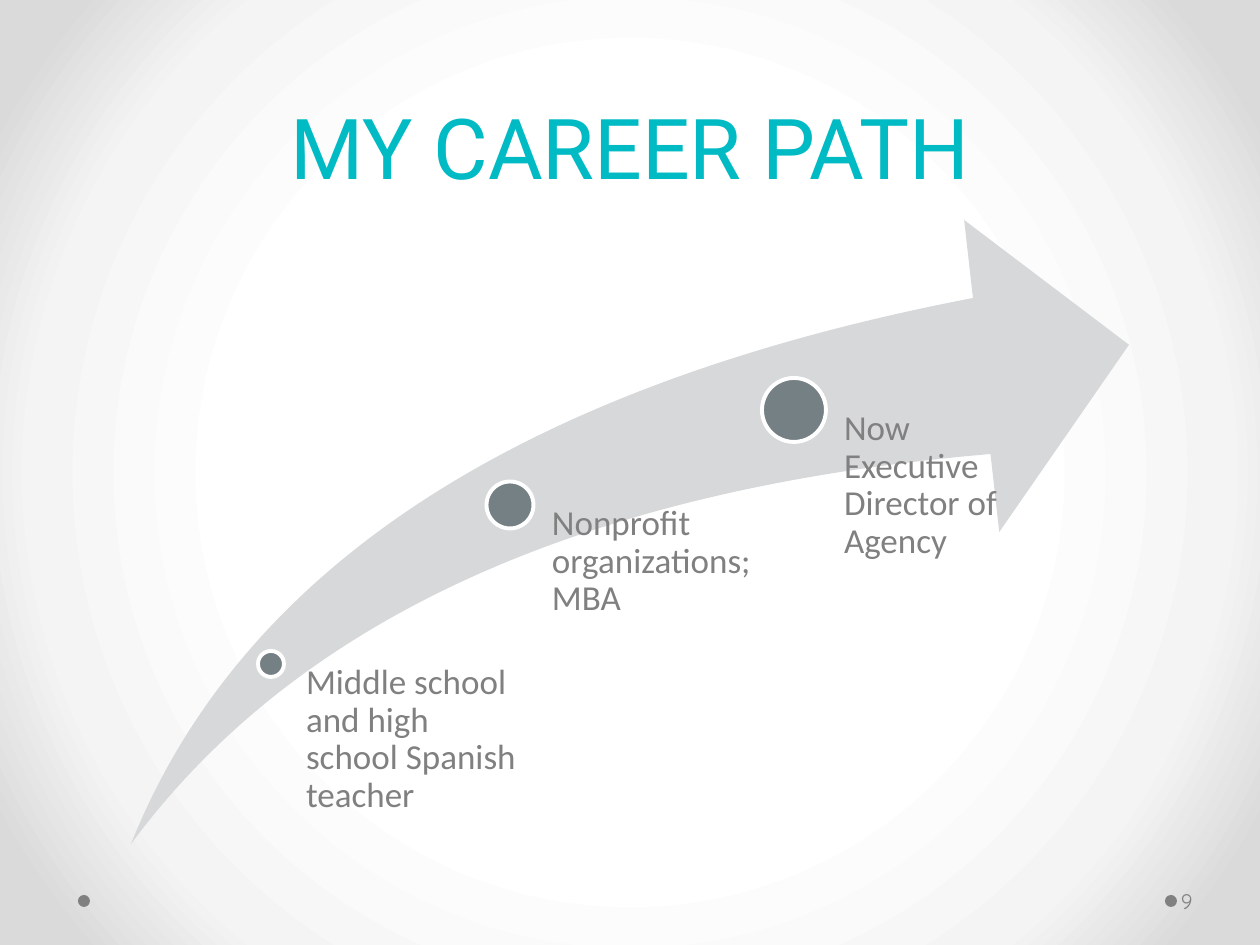
from pptx import Presentation
from pptx.dml.color import RGBColor
from pptx.enum.shapes import MSO_SHAPE
from pptx.enum.text import MSO_ANCHOR, PP_ALIGN
from pptx.oxml import parse_xml
from pptx.oxml.ns import nsdecls, qn
from pptx.util import Emu, Pt

PX_PER_INCH = 126
GREY = "808080"
ARROW_BOTTOM = 844

# centre x, centre y, diameter, label left, label width, label
MILESTONES = [
    (271, 664, 26, 306, 219, "Middle school and high school Spanish teacher"),
    (510, 505, 47, 552, 214, "Nonprofit organizations; MBA"),
    (794, 410, 64, 844, 206, "Now Executive Director of Agency"),
]


def px(n):
    return Emu(round(n * 914400 / PX_PER_INCH))


def rgb(color):
    return RGBColor.from_string(color)


def add_background(s, stops):
    """Fill the background with a circular gradient of (percent, colour) stops."""
    s.background.fill.gradient()
    old = s._element.find(".//" + qn("a:gradFill"))
    gs = "".join(
        f'<a:gs pos="{pos * 1000}"><a:srgbClr val="{color}"/></a:gs>'
        for pos, color in stops
    )
    old.getparent().replace(old, parse_xml(
        f'<a:gradFill rotWithShape="1" {nsdecls("a")}><a:gsLst>{gs}</a:gsLst>'
        '<a:path path="circle">'
        '<a:fillToRect l="50000" t="50000" r="50000" b="50000"/>'
        '</a:path></a:gradFill>'))


def add_shape(s, kind, x, y, w, h, fill, line=None):
    sp = s.shapes.add_shape(kind, px(x), px(y), px(w), px(h))
    sp.shadow.inherit = False
    sp.fill.solid()
    sp.fill.fore_color.rgb = rgb(fill)
    if line:
        sp.line.color.rgb = rgb(line)
        sp.line.width = Pt(2.25)
    else:
        sp.line.fill.background()
    return sp


def add_dot(s, cx, cy, d, fill, line=None):
    add_shape(s, MSO_SHAPE.OVAL, cx - d / 2, cy - d / 2, d, d, fill, line)


def add_text(s, text, x, y, w, h, font="Calibri", size=20, color=GREY,
             align=PP_ALIGN.LEFT, anchor=MSO_ANCHOR.TOP, spacing=None):
    tf = s.shapes.add_textbox(px(x), px(y), px(w), px(h)).text_frame
    tf.word_wrap = True
    tf.vertical_anchor = anchor
    tf.margin_left = tf.margin_right = tf.margin_top = tf.margin_bottom = 0
    p = tf.paragraphs[0]
    p.alignment = align
    p.line_spacing = spacing
    r = p.add_run()
    r.text = text
    r.font.name = font
    r.font.size = Pt(size)
    r.font.color.rgb = rgb(color)


def add_milestone(s, cx, cy, d, left, width, label):
    add_dot(s, cx, cy, d, "758085", "FFFFFF")
    add_text(s, label, left, cy, width, ARROW_BOTTOM - cy, spacing=0.9)


def main():
    prs = Presentation()
    prs.slide_width, prs.slide_height = px(1260), px(945)
    s = prs.slides.add_slide(prs.slide_layouts[6])
    add_background(s, [(50, "FFFFFF"), (76, "F4F4F4"), (92, "DADADA")])

    for cx in (84, 1171):
        add_dot(s, cx, 901, 12, GREY)
    add_text(s, "MY CAREER PATH", 63, 19, 1134, 177, font="Roboto", size=48,
             color="00BAC4", align=PP_ALIGN.CENTER, anchor=MSO_ANCHOR.BOTTOM,
             spacing=Pt(58))

    arrow = add_shape(s, MSO_SHAPE.SWOOSH_ARROW, 131, 220, 998, 624, "D6D8D9")
    arrow.adjustments[0] = arrow.adjustments[1] = 0.25
    for milestone in MILESTONES:
        add_milestone(s, *milestone)

    add_text(s, "9", 1181, 876, 66, 50, font="Quicksand", size=12,
             anchor=MSO_ANCHOR.MIDDLE)
    prs.save("out.pptx")


if __name__ == "__main__":
    main()
